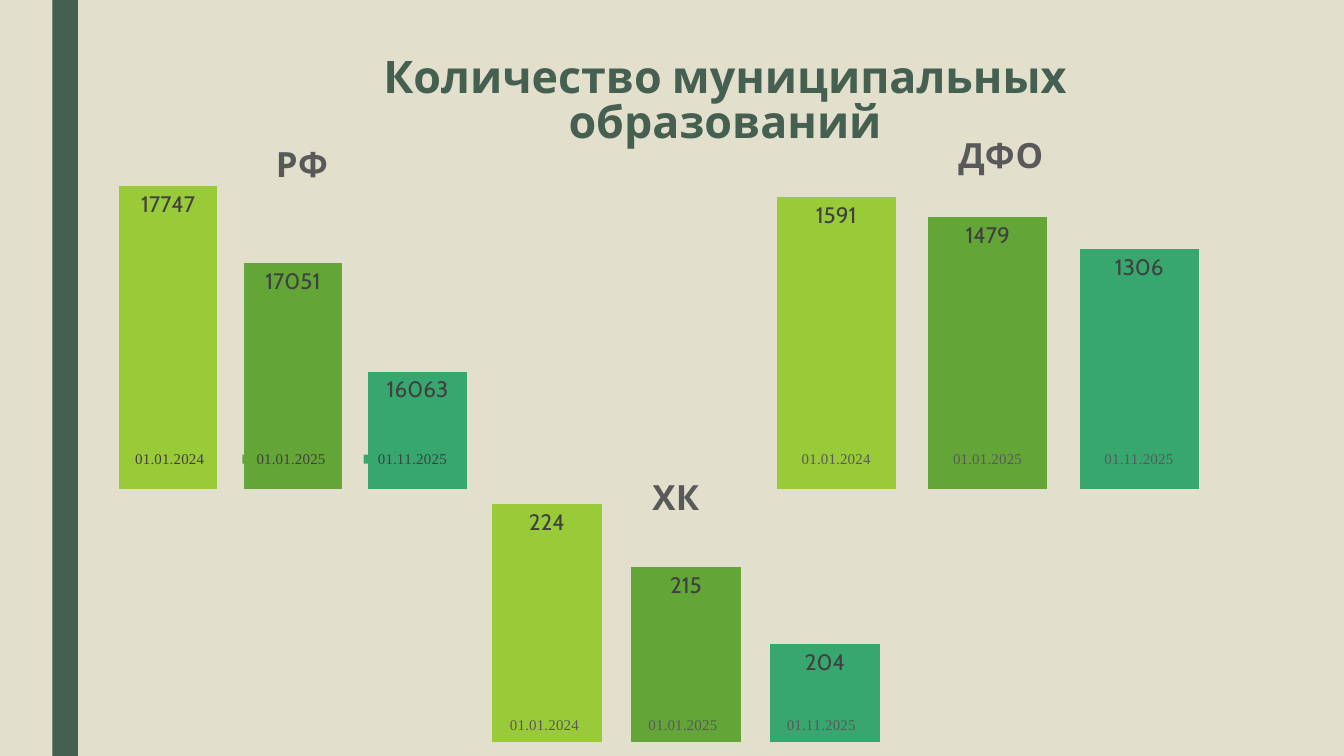
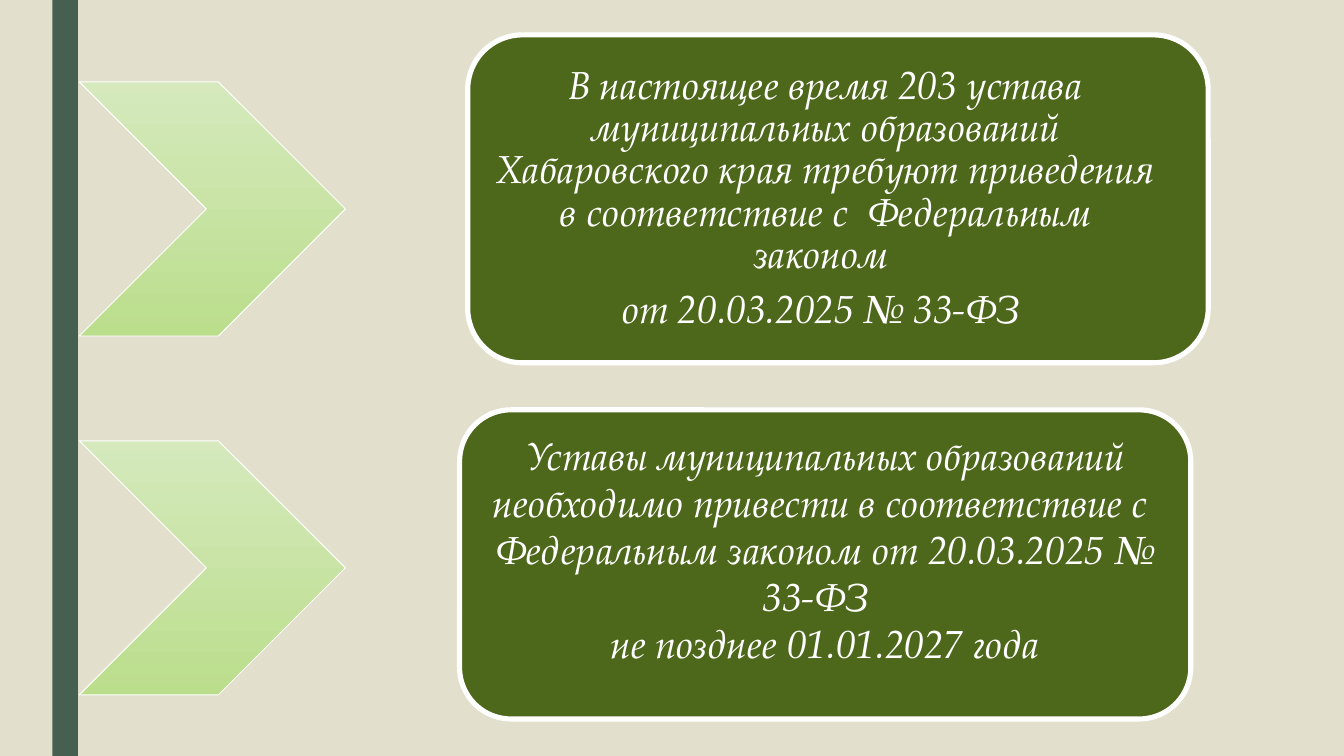
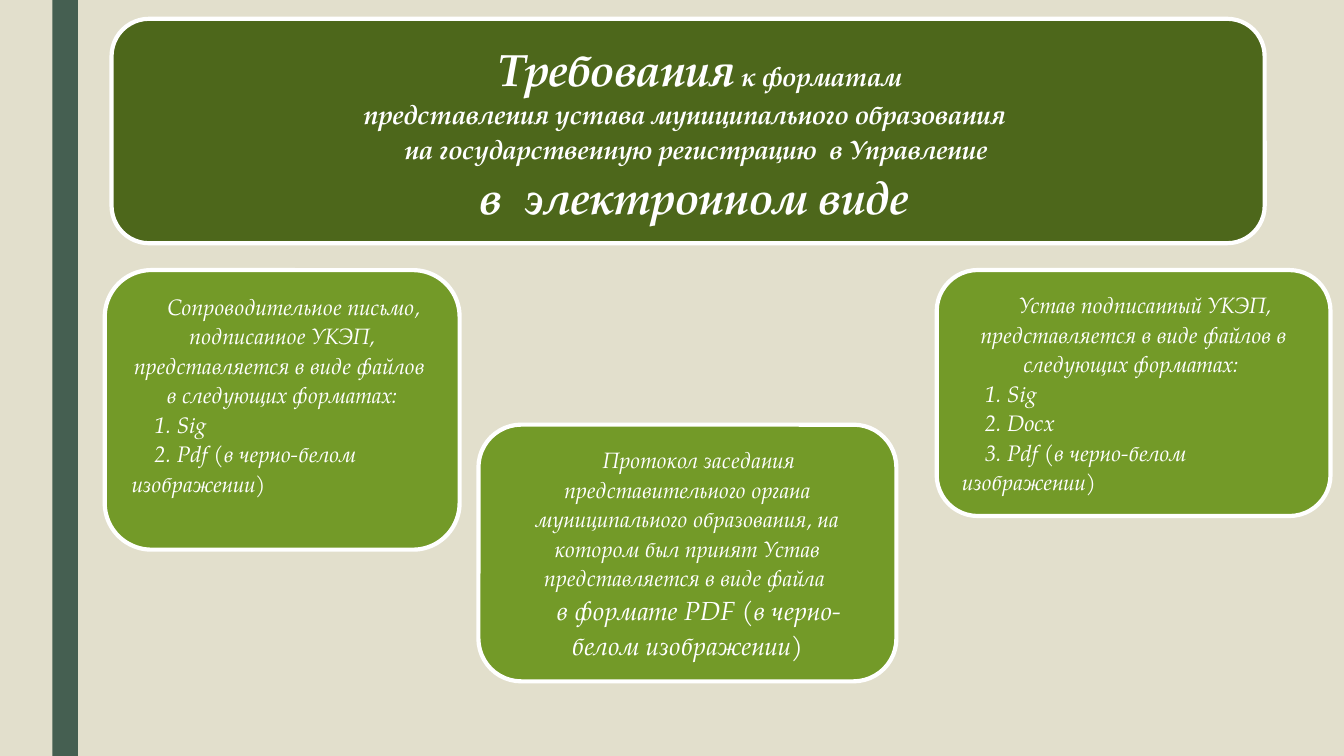
from lxml.etree import SubElement
from pptx import Presentation
from pptx.chart.data import CategoryChartData
from pptx.dml.color import RGBColor
from pptx.enum.chart import XL_CHART_TYPE as CHART, XL_LABEL_POSITION as LABEL, XL_LEGEND_POSITION as LEGEND
from pptx.enum.shapes import MSO_SHAPE as SHAPE
from pptx.enum.text import MSO_ANCHOR as ANCHOR, MSO_AUTO_SIZE as AUTO, PP_ALIGN as ALIGN
from pptx.oxml.ns import qn
from pptx.util import Inches, Pt

COLORS = {
    "background": "E2DFCC", "band": "455F51", "white": "FFFFFF",
    "dark": "4D671B", "green": "739A28", "text": "404040", "muted": "595959",
    "chevron_top": "D5E9BD", "chevron_bottom": "BBDE8C",
    "bar1": "99CB38", "bar2": "63A537", "bar3": "37A76F",
}
SANS, ITALIC, SERIF = "Cabin", "TeX Gyre Pagella", "Times New Roman"

TITLE = "Количество муниципальных образований"
DATES = ["01.01.2024", "01.01.2025", "01.11.2025"]
# Layout boxes are fractions of the chart: x, y[, width, height]
CHARTS = [
    dict(title="РФ", values=[17747, 17051, 16063], scale=(15000, 18000),
         box=(0, 0.55, 4.36, 3.15), plot=(0.02, 0.2, 0.96, 0.78),
         title_at=(0.46, 0.14), legend_at=(0.15, 0.87, 0.67, 0.08), legend_color="text"),
    dict(title="ДФО", values=[1591, 1479, 1306], scale=(0, 1800),
         box=(4.7, 0.55, 5.3, 3.15), plot=(0.02, 0.2, 0.96, 0.78),
         title_at=(0.45, 0.12), legend_at=(0.13, 0.87, 0.72, 0.08), legend_color="muted"),
    dict(title="ХК", values=[224, 215, 204], scale=(190, 230),
         box=(2.52, 2.81, 4.97, 3.15), plot=(0.05, 0.2, 0.94, 0.66),
         title_at=(0.46, 0.21), legend_at=(0.16, 0.78, 0.69, 0.08), legend_color="muted"),
]

CHEVRON_TOPS = [0.61, 3.28]
# A paragraph is (alignment, [(text, size), ...])
CHARTER_CARDS = [
    dict(box=(3.48, 0.26, 5.51, 2.44), anchor=ANCHOR.MIDDLE, insets=(0.05, 0.24),
         spacing=0.9, after=7, paragraphs=[
             (ALIGN.CENTER, [("В настоящее время 203 устава муниципальных образований Хабаровского края "
                              "требуют приведения в соответствие с  Федеральным законом ", 21)]),
             (ALIGN.CENTER, [("от 20.03.2025 № 33-ФЗ ", 21)])]),
    dict(box=(3.42, 3.05, 5.44, 2.3), paragraphs=[
        (ALIGN.CENTER, [("Уставы муниципальных образований необходимо привести в соответствие с  "
                         "Федеральным законом от 20.03.2025 № 33-ФЗ  \nне позднее 01.01.2027 года", 21)])]),
]

FORMAT_CARDS = [
    dict(box=(0.83, 0.14, 8.58, 1.67), fill="dark", bold=True, paragraphs=[
        (ALIGN.CENTER, [("Требования", 24),
                        (" к форматам\nпредставления устава муниципального образования ", 14)]),
        (ALIGN.CENTER, [("на государственную регистрацию  в Управление ", 14)]),
        (ALIGN.CENTER, [("в  электронном виде ", 24)])]),
    dict(box=(0.78, 2.01, 2.64, 2.08), paragraphs=[
        (ALIGN.CENTER, [("Сопроводительное письмо, подписанное УКЭП, представляется в виде файлов \n"
                         "в следующих форматах:", 12)]),
        (ALIGN.LEFT, [("1. Sig", 12)]),
        (ALIGN.LEFT, [("2. Pdf (в черно-белом изображении)", 12)])]),
    dict(box=(6.97, 2.01, 2.93, 1.83), paragraphs=[
        (ALIGN.CENTER, [("Устав подписанный УКЭП, представляется в виде файлов "
                         "в следующих форматах: ", 12)]),
        (ALIGN.LEFT, [("1. Sig", 12)]),
        (ALIGN.LEFT, [("2. Docx", 12)]),
        (ALIGN.LEFT, [("3. Pdf (в черно-белом изображении)", 12)])]),
    dict(box=(3.56, 3.16, 3.11, 1.91), paragraphs=[
        (ALIGN.CENTER, [("Протокол заседания представительного органа муниципального образования, "
                         "на котором был принят Устав представляется в виде файла ", 12)]),
        (ALIGN.CENTER, [("в формате PDF (в черно-белом изображении)", 14)])]),
]


def rgb(name):
    return RGBColor.from_string(COLORS[name])


def inches(box):
    return [Inches(v) for v in box]


def set_font(font, name, size, color, bold=False, italic=False):
    font.name, font.size, font.bold, font.italic = name, Pt(size), bold, italic
    font.color.rgb = rgb(color)


def add_shape(slide, kind, box, fill=None, line_width=0):
    """Add a shape with a plain fill and, if it has a width, a white outline."""
    s = slide.shapes.add_shape(kind, *inches(box))
    s.shadow.inherit = False
    if fill:
        s.fill.solid()
        s.fill.fore_color.rgb = rgb(fill)
    if line_width:
        s.line.color.rgb = rgb("white")
        s.line.width = Pt(line_width)
    else:
        s.line.fill.background()
    return s


def set_layout(parent, index, box, inner=False):
    """Fix the place of a chart part, as fractions of the chart."""
    for old in parent.findall(qn("c:layout")):
        parent.remove(old)
    layout = SubElement(parent, qn("c:layout"))
    parent.insert(index, layout)
    manual = SubElement(layout, qn("c:manualLayout"))
    settings = [("layoutTarget", "inner")] if inner else []
    settings += [("xMode", "edge"), ("yMode", "edge")]
    settings += [(key, str(v)) for key, v in zip("xywh", box)]
    for tag, value in settings:
        SubElement(manual, qn(f"c:{tag}")).set("val", value)


def add_column_chart(slide, spec):
    data = CategoryChartData()
    data.categories = ["1"]
    for date, value in zip(DATES, spec["values"]):
        data.add_series(date, [value])
    chart = slide.shapes.add_chart(CHART.COLUMN_CLUSTERED, *inches(spec["box"]), data).chart
    chart.font.name, chart.font.size = SANS, Pt(10)

    chart.has_title = True
    p = chart.chart_title.text_frame.paragraphs[0]
    p.text = spec["title"]
    set_font(p.font, SANS, 18.6, "muted", bold=True)

    chart.has_legend = True
    chart.legend.position = LEGEND.BOTTOM
    chart.legend.include_in_layout = True
    set_font(chart.legend.font, SERIF, 8, spec["legend_color"])

    chart.value_axis.minimum_scale, chart.value_axis.maximum_scale = spec["scale"]
    chart.value_axis.has_major_gridlines = False
    chart.value_axis.visible = chart.category_axis.visible = False

    plot = chart.plots[0]
    plot.gap_width, plot.overlap, plot.vary_by_categories = 219, -27, False
    for number, series in enumerate(plot.series, 1):
        series.format.fill.solid()
        series.format.fill.fore_color.rgb = rgb(f"bar{number}")
        labels = series.data_labels
        labels.show_value = True
        labels.position = LABEL.INSIDE_END
        set_font(labels.font, SANS, 12, "text")

    root = chart.element.find(qn("c:chart"))
    set_layout(root.find(qn("c:title")), 1, spec["title_at"])
    set_layout(root.find(qn("c:plotArea")), 0, spec["plot"], inner=True)
    set_layout(root.find(qn("c:legend")), 1, spec["legend_at"])


def add_card(slide, box, paragraphs, fill, line_width, anchor=ANCHOR.TOP,
             insets=(0.1, 0.1), spacing=1.0, after=0, indent=0, bold=False):
    s = add_shape(slide, SHAPE.ROUNDED_RECTANGLE, box, fill, line_width)
    tf = s.text_frame
    tf.word_wrap, tf.vertical_anchor = True, anchor
    tf.margin_left, tf.margin_right = inches(insets)
    for i, (align, runs) in enumerate(paragraphs):
        p = tf.add_paragraph() if i else tf.paragraphs[0]
        p.alignment, p.line_spacing, p.space_after = align, spacing, Pt(after)
        if indent:
            p._p.get_or_add_pPr().set("indent", str(Inches(indent)))
        set_font(p.font, ITALIC, runs[0][1], "white", bold, italic=True)
        for text, size in runs:
            for j, line in enumerate(text.split("\n")):
                if j:
                    p.add_line_break()
                r = p.add_run()
                r.text = line
                if len(runs) > 1:
                    r.font.size = Pt(size)


def style_master(prs, slide):
    """Give all slides the background and the band at the left."""
    master = prs.slide_master
    master.background.fill.solid()
    master.background.fill.fore_color.rgb = rgb("background")
    band = add_shape(slide, SHAPE.RECTANGLE, (0.39, 0, 0.19, 5.62), "band")
    band.height = prs.slide_height
    master.shapes.element.append(band.element)


def build_counts(slide):
    for spec in CHARTS:
        add_column_chart(slide, spec)
    title = slide.shapes.title
    title.left, title.top, title.width, title.height = inches((2.18, 0.37, 6.43, 1.07))
    tf = title.text_frame
    tf.word_wrap, tf.vertical_anchor, tf.auto_size = True, ANCHOR.TOP, AUTO.NONE
    p = tf.paragraphs[0]
    p.text = TITLE
    p.alignment, p.line_spacing, p.space_before = ALIGN.CENTER, 0.85, Pt(0)
    set_font(p.font, SANS, 24, "band", bold=True)


def build_charters(slide):
    for top in CHEVRON_TOPS:
        chevron = add_shape(slide, SHAPE.CHEVRON, (0.59, top, 1.98, 1.89), line_width=0.5)
        chevron.fill.gradient()
        chevron.fill.gradient_angle = 270
        for stop, color in zip(chevron.fill.gradient_stops, ("chevron_top", "chevron_bottom")):
            stop.color.rgb = rgb(color)
    for card in CHARTER_CARDS:
        add_card(slide, fill="dark", line_width=2.75, **card)


def build_formats(slide):
    for card in FORMAT_CARDS:
        add_card(slide, **{"fill": "green", "line_width": 2.25, "spacing": 1.1, "indent": 0.17, **card})


def main():
    prs = Presentation()
    prs.slide_width = Inches(10)
    prs.slide_height = prs.slide_width * 9 // 16
    title_only, blank = prs.slide_layouts[5], prs.slide_layouts[6]
    counts = prs.slides.add_slide(title_only)
    style_master(prs, counts)
    build_counts(counts)
    build_charters(prs.slides.add_slide(blank))
    build_formats(prs.slides.add_slide(blank))
    prs.save("out.pptx")


if __name__ == "__main__":
    main()
